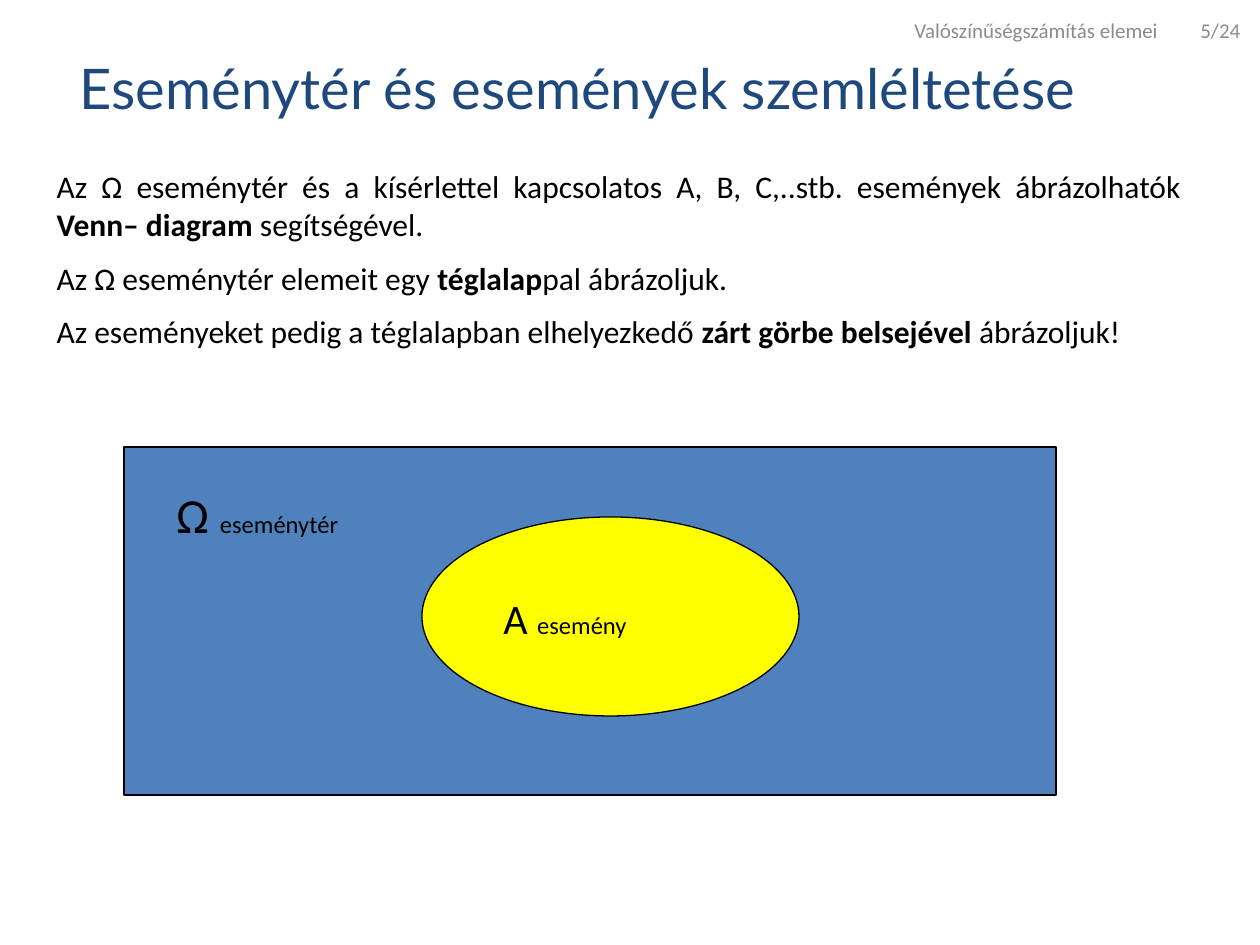
from pptx import Presentation
from pptx.dml.color import RGBColor
from pptx.enum.shapes import MSO_SHAPE as SHAPE
from pptx.enum.text import MSO_ANCHOR as ANCHOR, MSO_AUTO_SIZE as FIT, PP_ALIGN as ALIGN
from pptx.oxml.ns import qn
from pptx.util import Pt
from lxml.etree import SubElement

EMU_PER_PX = 914400 / 126


def px(*lengths):
    return [round(length * EMU_PER_PX) for length in lengths]


def add_run(para, text, size, color="000000", bold=False, font="Calibri"):
    span = para.add_run()
    span.text = text
    span.font.name, span.font.size, span.font.bold = font, Pt(size), bold
    span.font.color.rgb = RGBColor.from_string(color)


deck = Presentation()
deck.slide_width, deck.slide_height = px(1260, 945)
page = deck.slides.add_slide(deck.slide_layouts[1])

# Title
title = page.shapes.title
title.left, title.top, title.width, title.height = px(67, 44, 1134, 87)
title.text_frame.auto_size = FIT.NONE
title.text_frame.vertical_anchor = ANCHOR.MIDDLE
para = title.text_frame.paragraphs[0]
para.alignment = ALIGN.LEFT
add_run(para, "Eseménytér és események szemléltetése", 32, "1F497D", font="Lato")

# Body: each paragraph is plain, bold, plain
sentences = [
    ("Az Ω eseménytér és a kísérlettel kapcsolatos A, B, C,..stb. események ábrázolhatók ",
     "Venn– diagram", " segítségével."),
    ("Az Ω eseménytér elemeit egy ", "téglalap", "pal ábrázoljuk."),
    ("Az eseményeket pedig a téglalapban elhelyezkedő ",
     "zárt görbe belsejével", " ábrázoljuk!"),
]
body = page.placeholders[1]
body.left, body.top, body.width, body.height = px(44, 161, 1150, 204)
frame = body.text_frame
frame.auto_size = FIT.NONE
for number, sentence in enumerate(sentences):
    para = frame.add_paragraph() if number else frame.paragraphs[0]
    para.alignment = ALIGN.JUSTIFY
    para.space_before = Pt(9 if number else 0)
    props = para._p.get_or_add_pPr()
    props.set("marL", "0")
    props.set("indent", "0")
    SubElement(props, qn("a:buNone"))
    for part, text in enumerate(sentence):
        add_run(para, text, 18, bold=part == 1)

# Venn diagram: sample space, then the event inside it
venn_sets = [
    (SHAPE.RECTANGLE, (124, 447, 932, 348), "4F81BD",
     (164, 478, 208, 72), "Ω ", 28, "eseménytér"),
    (SHAPE.OVAL, (422, 517, 377, 199), "FFFF00",
     (491, 586, 208, 63), "A ", 24, "esemény"),
]
for kind, area, fill, label_area, symbol, size, name in venn_sets:
    group = page.shapes.add_group_shape()
    outline = group.shapes.add_shape(kind, *px(*area))
    outline.shadow.inherit = False
    outline.fill.solid()
    outline.fill.fore_color.rgb = RGBColor.from_string(fill)
    outline.line.color.rgb = RGBColor.from_string("000000")
    outline.line.width = Pt(0.75)
    label = group.shapes.add_textbox(*px(*label_area))
    label.text_frame.word_wrap = True
    para = label.text_frame.paragraphs[0]
    add_run(para, symbol, size)
    add_run(para, name, 14)

# Running header, page number set at a tab stop
header = page.shapes.add_textbox(*px(902, 5, 354, 50))
header.text_frame.word_wrap = True
header.text_frame.vertical_anchor = ANCHOR.MIDDLE
para = header.text_frame.paragraphs[0]
tabs = SubElement(para._p.get_or_add_pPr(), qn("a:tabLst"))
SubElement(tabs, qn("a:tab"), pos=str(px(286)[0]), algn="l")
add_run(para, "Valószínűségszámítás elemei\t5/24", 12, "8C8C8C")

deck.save("out.pptx")
